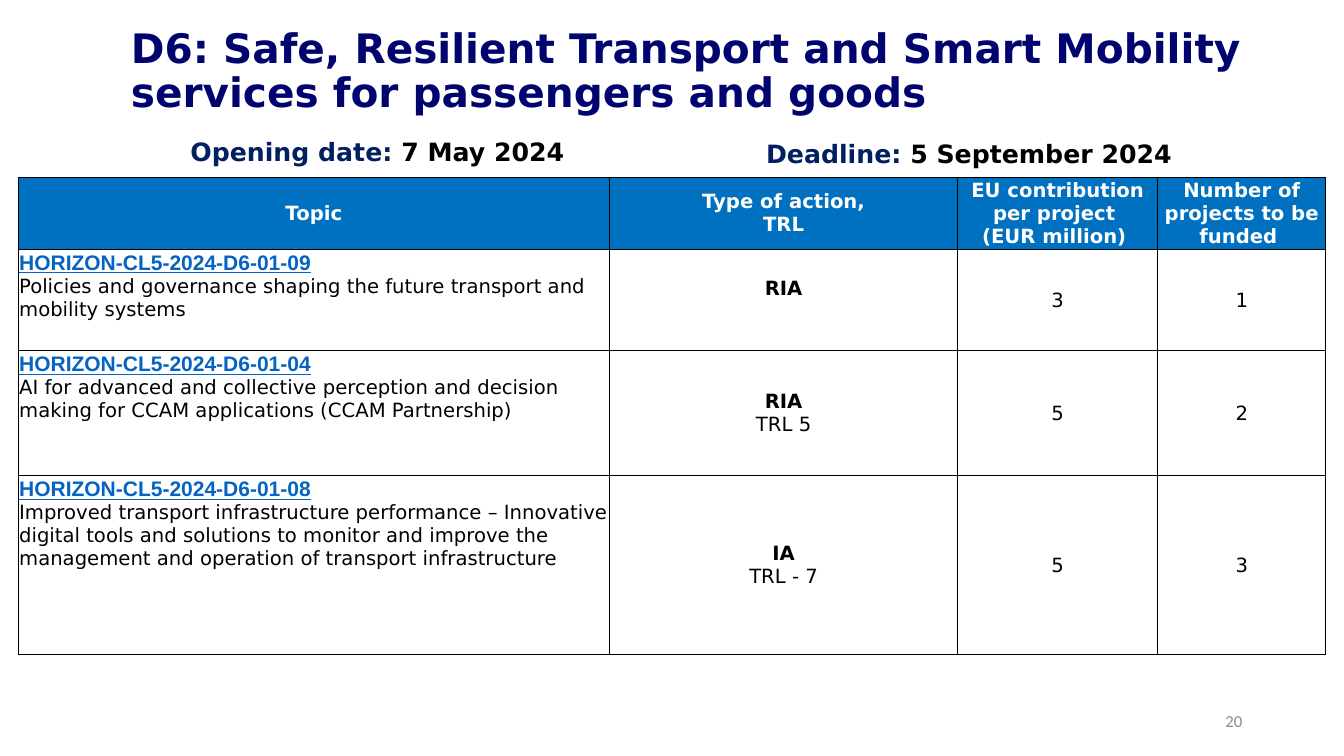
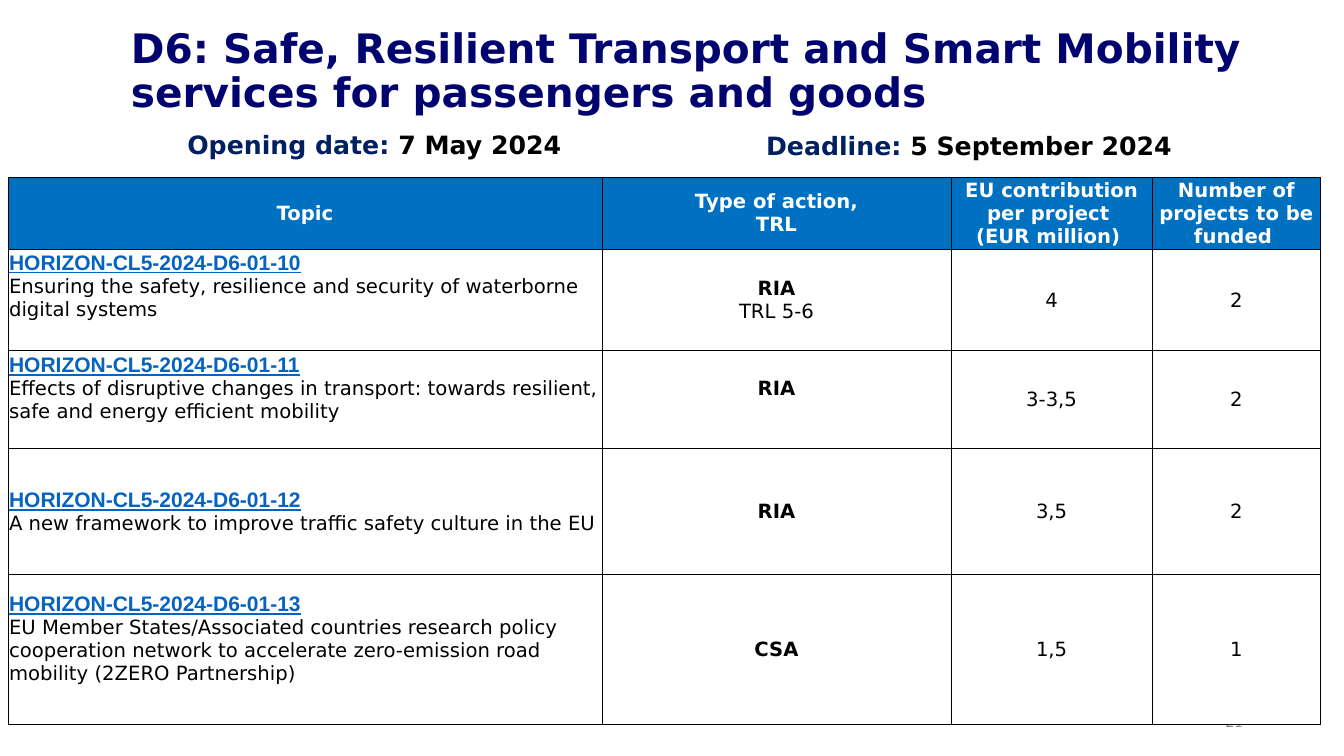
from lxml import etree
from pptx import Presentation
from pptx import util as u
from pptx.dml.color import RGBColor
from pptx.enum import text as t
from pptx.oxml.ns import qn

# Shared content
TITLE = "D6: Safe, Resilient Transport and Smart Mobility services for passengers and goods "
OPENING = ("Opening date: ", "7 May 2024 ")
DEADLINE = ("Deadline: ", "5 September 2024")
HEADER = [
    ["Topic"],
    ["Type of action,", "TRL"],
    ["EU contribution per project ", "(EUR million) "],
    ["Number of projects to be funded "],
]
CODE_PREFIX = "HORIZON-CL5-2024-D6-01-"

# Topic rows: code, topic, action, TRL, contribution, projects,
# row height, space under topic, space under action
SLIDES = [
    dict(number="20", left=0.18, width=12.97, opening=(1.79, 1.3), deadline=(7.5, 1.32), topics=[
        ("09", "Policies and governance shaping the future transport and mobility systems",
         "RIA", "", "3", "1", 0.99, 0.28, 0.23),
        ("04", "AI for advanced and collective perception and decision making for CCAM "
         "applications (CCAM Partnership)", "RIA", "TRL 5", "5", "2", 1.22, 0.51, 0),
        ("08", "Improved transport infrastructure performance – Innovative digital tools and "
         "solutions to monitor and improve the management and operation of transport "
         "infrastructure", "IA", "TRL - 7", "5", "3", 1.77, 0.82, 0),
    ]),
    dict(number="21", left=0.08, width=13.02, opening=(1.76, 1.23), deadline=(7.5, 1.24), topics=[
        ("10", "Ensuring the safety, resilience and security of waterborne digital systems",
         "RIA", "TRL 5-6", "4", "2", 0.99, 0.28, 0),
        ("11", "Effects of disruptive changes in transport: towards resilient, safe and energy "
         "efficient mobility", "RIA", "", "3-3,5", "2", 0.97, 0.23, 0.23),
        ("12", "A new framework to improve traffic safety culture in the EU",
         "RIA", "", "3,5", "2", 1.25, 0, 0),
        ("13", "EU Member States/Associated countries research policy cooperation network to "
         "accelerate zero-emission road mobility (2ZERO Partnership)",
         "CSA", "", "1,5", "1", 1.49, 0.22, 0),
    ]),
]

# Shared layout and formats
TABLE_TOP, HEADER_HEIGHT = 1.76, 0.69
COLUMNS = [5.88, 3.46, 1.99, 1.67]
BLUE, WHITE, BLACK = "0070C0", "FFFFFF", "000000"
LEFT, CENTER, RIGHT = t.PP_ALIGN.LEFT, t.PP_ALIGN.CENTER, t.PP_ALIGN.RIGHT


def style(size, color, bold=False, name="DejaVu Sans", underline=False):
    return dict(size=u.Pt(size), color=color, bold=bold, name=name, underline=underline)


TITLE_STYLE = style(29, "01046E", True)
NUMBER_STYLE = style(12, "8C8C8C", name="Calibri")
LABEL_STYLE, DATE_STYLE = style(18, "002060", True), style(18, BLACK, True)
HEADER_STYLE = style(14, WHITE, True)
CODE_STYLE = style(15, "0563C1", True, "Arial", True)
BODY_STYLE, ACTION_STYLE = style(14, BLACK), style(14, BLACK, True)


def rgb(color):
    return RGBColor.from_string(color)


def write(frame, paragraphs, align=LEFT, spacing=None):
    """Each paragraph is a list of (text, style) runs."""
    frame.word_wrap = True
    for index, runs in enumerate(paragraphs):
        paragraph = frame.add_paragraph() if index else frame.paragraphs[0]
        paragraph.alignment = align
        paragraph.line_spacing = spacing
        for text, values in runs:
            run = paragraph.add_run()
            run.text = text
            for key, value in values.items():
                if key == "color":
                    run.font.color.rgb = rgb(value)
                else:
                    setattr(run.font, key, value)


def add_text(slide, box, runs, anchor=t.MSO_ANCHOR.TOP, **options):
    frame = slide.shapes.add_textbox(*map(u.Inches, box)).text_frame
    frame.vertical_anchor = anchor
    write(frame, [runs], **options)


def add_borders(cell):
    properties = cell._tc.get_or_add_tcPr()
    for index, side in enumerate(("a:lnL", "a:lnR", "a:lnT", "a:lnB")):
        line = etree.Element(qn(side), w=str(u.Pt(0.5)))
        fill = etree.SubElement(line, qn("a:solidFill"))
        etree.SubElement(fill, qn("a:srgbClr"), val=BLACK)
        properties.insert(index, line)


def fill_cell(cell, paragraphs, color=WHITE, align=CENTER, space_under=0):
    cell.fill.solid()
    cell.fill.fore_color.rgb = rgb(color)
    cell.vertical_anchor = t.MSO_ANCHOR.MIDDLE
    cell.margin_left = cell.margin_right = cell.margin_top = u.Inches(0.01)
    cell.margin_bottom = u.Inches(space_under)
    write(cell.text_frame, paragraphs, align)
    add_borders(cell)


def add_topic_table(slide, left, width, topics):
    heights = [HEADER_HEIGHT] + [topic[6] for topic in topics]
    box = (left, TABLE_TOP, width, sum(heights))
    table = slide.shapes.add_table(len(heights), len(COLUMNS), *map(u.Inches, box)).table
    for column, share in zip(table.columns, COLUMNS):
        column.width = u.Inches(width * share / sum(COLUMNS))
    for row, height in zip(table.rows, heights):
        row.height = u.Inches(height)

    for column, lines in enumerate(HEADER):
        fill_cell(table.cell(0, column), [[(line, HEADER_STYLE)] for line in lines], BLUE)

    for row, topic in enumerate(topics, 1):
        code, name, action, trl, contribution, projects, _, under_topic, under_action = topic
        fill_cell(table.cell(row, 0), [[(CODE_PREFIX + code, CODE_STYLE)], [(name, BODY_STYLE)]],
                  align=LEFT, space_under=under_topic)
        levels = [[(action, ACTION_STYLE)]] + ([[(trl, BODY_STYLE)]] if trl else [])
        fill_cell(table.cell(row, 1), levels, space_under=under_action)
        for column, value in enumerate((contribution, projects), 2):
            fill_cell(table.cell(row, column), [[(value, BODY_STYLE)]])


def main():
    presentation = Presentation()
    presentation.slide_width, presentation.slide_height = u.Inches(13.33), u.Inches(7.5)
    middle = t.MSO_ANCHOR.MIDDLE
    for content in SLIDES:
        slide = presentation.slides.add_slide(presentation.slide_layouts[6])
        add_text(slide, (1.2, -0.01, 11.5, 1.45), [(TITLE, TITLE_STYLE)], middle, spacing=0.9)
        add_text(slide, (9.42, 6.95, 3, 0.4), [(content["number"], NUMBER_STYLE)], middle,
                 align=RIGHT)
        add_topic_table(slide, content["left"], content["width"], content["topics"])
        for key, width, (label, date) in (("deadline", 4.8, DEADLINE), ("opening", 6.64, OPENING)):
            add_text(slide, (*content[key], width, 0.4),
                     [(label, LABEL_STYLE), (date, DATE_STYLE)])
    presentation.save("out.pptx")


if __name__ == "__main__":
    main()
